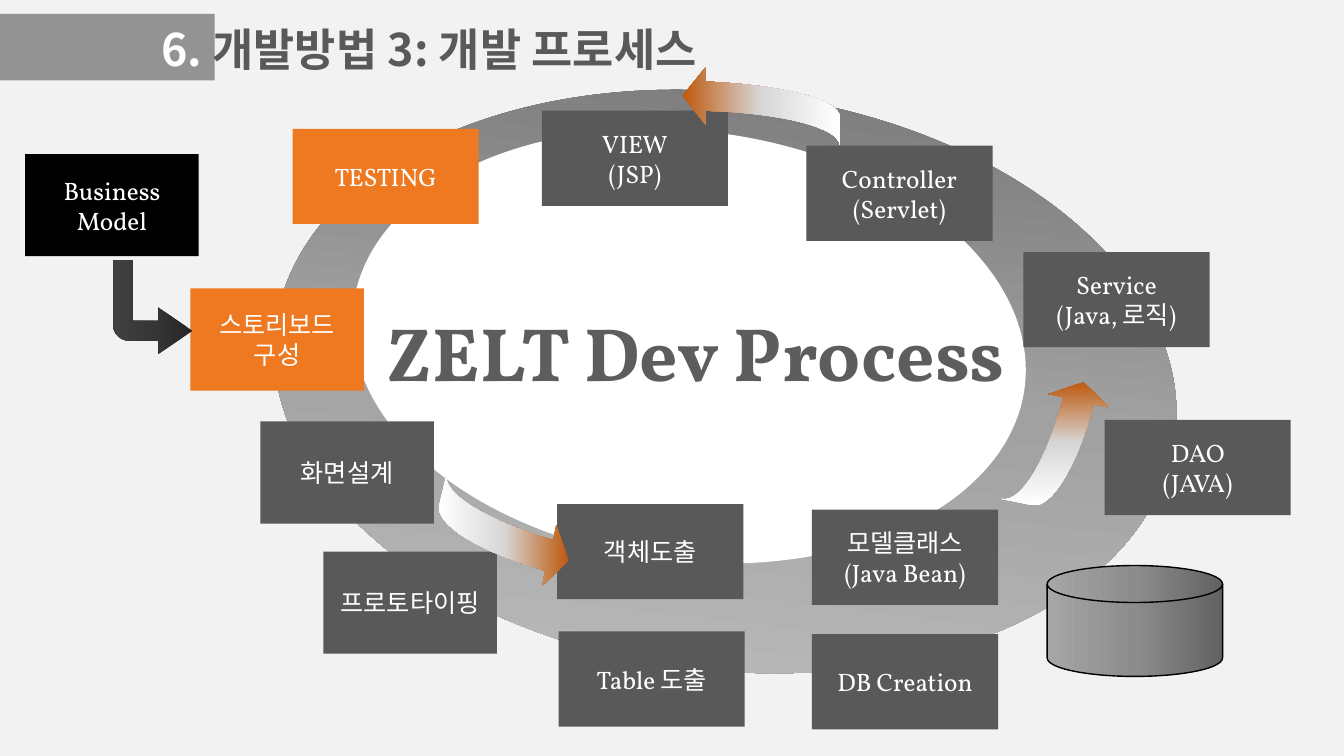
"""Build the development process slide with its ring of steps."""
from lxml.etree import SubElement as Sub
from pptx import Presentation
from pptx.dml.color import RGBColor as RGB
from pptx.enum.shapes import MSO_SHAPE as Kind
from pptx.enum.text import MSO_ANCHOR as Anchor, MSO_AUTO_SIZE as Fit, PP_ALIGN as Align
from pptx.oxml.ns import qn
from pptx.util import Pt

WHITE = RGB(0xFF, 0xFF, 0xFF)
BLACK = RGB(0, 0, 0)
PAPER = RGB(0xF2, 0xF2, 0xF2)
BAR = RGB(0x93, 0x93, 0x93)
GRAY = RGB(0x59, 0x59, 0x59)
INK = RGB(0x5D, 0x5D, 0x5D)
ORANGE = RGB(0xEF, 0x79, 0x20)
RING = [RGB(0x71, 0x71, 0x71), RGB(0xA1, 0xA1, 0xA1), RGB(0xBF, 0xBF, 0xBF)]
DISK = [RGB(0x62, 0x62, 0x62), RGB(0x8C, 0x8C, 0x8C), RGB(0xA6, 0xA6, 0xA6)]
BENT = [RGB(0x26, 0x26, 0x26), RGB(0x36, 0x36, 0x36), RGB(0x40, 0x40, 0x40)]
GLOW = [RGB(0xBE, 0x59, 0x0E), RGB(0xD7, 0xD7, 0xD7), WHITE]
SERIF = "Vollkorn"
SANS = "Noto Sans CJK KR"


def paint(shape, fill, angle=0):
    shape.shadow.inherit = False
    shape.line.fill.background()
    if isinstance(fill, RGB):
        shape.fill.solid()
        shape.fill.fore_color.rgb = fill
        return
    shape.fill.gradient()
    grad = shape._element.spPr.find(qn("a:gradFill"))
    for child in list(grad):
        grad.remove(child)
    stops = Sub(grad, qn("a:gsLst"))
    for i, tint in enumerate(fill):
        stop = Sub(stops, qn("a:gs"), pos=str(i * 50000))
        Sub(stop, qn("a:srgbClr"), val=str(tint))
    Sub(grad, qn("a:lin"), ang=str(angle * 60000), scaled="0")


def write(para, text, size, tint, face, bold=False):
    for i, line in enumerate(text.split("\n")):
        if i:
            para.add_line_break()
        run = para.add_run()
        run.text = line
        run.font.size = Pt(size)
        run.font.bold = bold
        run.font.color.rgb = tint
        run.font.name = face
        Sub(run._r.get_or_add_rPr(), qn("a:ea"), typeface=SANS)


deck = Presentation()
deck.slide_width, deck.slide_height = Pt(960), Pt(540)
slide = deck.slides.add_slide(deck.slide_layouts[5])
slide.background.fill.solid()
slide.background.fill.fore_color.rgb = PAPER
shapes = slide.shapes

bar = shapes.add_shape(Kind.RECTANGLE, Pt(-0.7), Pt(10), Pt(154), Pt(47.5))
paint(bar, BAR)
title = shapes.title
title._element.addprevious(bar._element)
title.left, title.top, title.width, title.height = Pt(108), Pt(12.2), Pt(437), Pt(46)
frame = title.text_frame
frame.word_wrap = False
frame.auto_size = Fit.NONE
frame.vertical_anchor = Anchor.TOP
frame.paragraphs[0].alignment = Align.LEFT
write(frame.paragraphs[0], "6. ", 32, WHITE, SANS, True)
write(frame.paragraphs[0], "개발방법 3: 개발 프로세스", 32, GRAY, SANS, True)

group = shapes.add_group_shape()
for x, y, w, h, fill in [
    (194.4, 66.2, 647.3, 412.6, RING),
    (250.6, 93.6, 483.1, 307.4, WHITE),
]:
    oval = group.shapes.add_shape(Kind.OVAL, Pt(x), Pt(y), Pt(w), Pt(h))
    oval.rotation = 6.8
    paint(oval, fill, 90)

disk = shapes.add_shape(
    Kind.FLOWCHART_MAGNETIC_DISK, Pt(748), Pt(404), Pt(125.3), Pt(79.2))
paint(disk, DISK, 180)
disk.line.color.rgb = BLACK
disk.line.width = Pt(1)

SMALL, LARGE = (124, 73), (133, 68)
boxes = [
    (136, 206, SMALL, ORANGE, "스토리보드|구성"),
    (186, 301, SMALL, GRAY, "화면설계"),
    (231, 394, SMALL, GRAY, "프로토타이핑"),
    (398, 360, LARGE, GRAY, "객체도출"),
    (399, 451, LARGE, GRAY, "Table 도출"),
    (580, 453, LARGE, GRAY, "DB Creation"),
    (580, 364, LARGE, GRAY, "모델클래스\n(Java Bean)"),
    (789, 300, LARGE, GRAY, "DAO\n(JAVA)"),
    (731, 180, LARGE, GRAY, "Service\n(Java, 로직)"),
    (387, 79, LARGE, GRAY, "VIEW\n(JSP)"),
    (209, 92, LARGE, ORANGE, "TESTING"),
    (576, 104, LARGE, GRAY, "Controller\n(Servlet)"),
    (18, 110, SMALL, BLACK, "Business\nModel"),
]
for x, y, (w, h), fill, text in boxes:
    box = shapes.add_shape(Kind.RECTANGLE, Pt(x), Pt(y), Pt(w), Pt(h))
    paint(box, fill)
    frame = box.text_frame
    frame.word_wrap = True
    frame.vertical_anchor = Anchor.MIDDLE
    for i, part in enumerate(text.split("|")):
        para = frame.add_paragraph() if i else frame.paragraphs[0]
        para.alignment = Align.CENTER
        write(para, part, 18, WHITE, SERIF)
    if text.startswith("Controller"):
        front = box

arrows = [
    (180, [(319, 339.1), (316.1, 352.8), (348.5, 372.2), (395.3, 385.9),
           (397.4, 375.1), (406.1, 400.3), (387.4, 418.3), (389.5, 407.5),
           (342.7, 394.6), (310.3, 374.4), (313.9, 360.7)]),
    (90, [(715.7, 356.4), (729.4, 359.3), (748.1, 328.3), (759.6, 283.7),
          (748.8, 281.5), (774, 272.9), (792, 290.9), (781.2, 288.7),
          (769.7, 332.6), (751, 363.6), (737.3, 360.7)]),
    (0, [(599.8, 103.7), (599.8, 91.4), (558.7, 80.6), (504, 79.2),
         (504, 89.3), (487.4, 68.4), (504, 48.2), (504, 58.3),
         (558.7, 60.5), (599.8, 71.3), (599.8, 83.5)]),
]
STEPS = 16
for angle, knots in arrows:
    curves = []
    for first in (0, 7):
        a, b, c, d = knots[first:first + 4]
        curve = []
        for n in range(STEPS + 1):
            t = n / STEPS
            u = 1 - t
            curve.append([
                Pt(u**3 * a[k] + 3 * u * u * t * b[k] + 3 * u * t * t * c[k] + t**3 * d[k])
                for k in (0, 1)])
        curves.append(curve)
    inner, outer = curves
    head = [(Pt(x), Pt(y)) for x, y in knots[4:7]]
    pen = shapes.build_freeform(*inner[0])
    pen.add_line_segments(inner[1:] + head + outer, close=True)
    arrow = pen.convert_to_shape()
    paint(arrow, GLOW, angle)
    front._element.addprevious(arrow._element)

label = shapes.add_textbox(Pt(264.2), Pt(214.6), Pt(465.8), Pt(72.7))
label.text_frame.word_wrap = False
para = label.text_frame.paragraphs[0]
para.alignment = Align.CENTER
write(para, "ZELT Dev Process", 54, INK, SERIF, True)

bent = shapes.add_shape(Kind.BENT_ARROW, Pt(80.6), Pt(185.8), Pt(56.9), Pt(67))
for i, value in enumerate((0.25, 0.29, 0.43, 0.21)):
    bent.adjustments[i] = value
bent._element.spPr.find(qn("a:xfrm")).set("flipV", "1")
paint(bent, BENT, 180)

deck.save("out.pptx")
